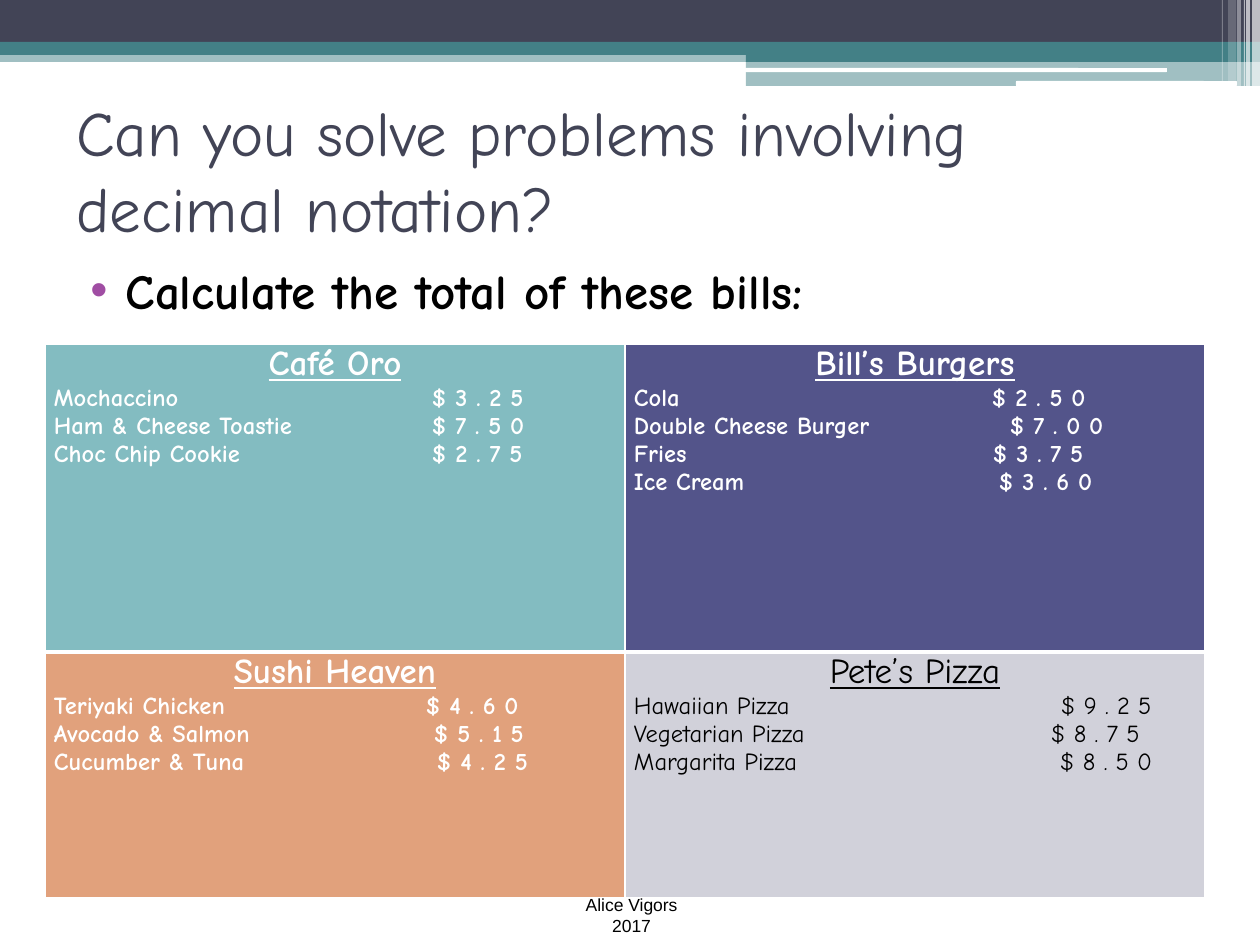
from lxml import etree
from pptx import Presentation, util as u
from pptx.dml.color import RGBColor
from pptx.enum import shapes, text
from pptx.oxml import ns

SCALE = 914400 / 126  # EMU per px

WHITE = RGBColor(0xFF, 0xFF, 0xFF)
BLACK = RGBColor(0, 0, 0)
NAVY = RGBColor(0x42, 0x44, 0x56)
TEAL = RGBColor(0x43, 0x80, 0x86)
AQUA = RGBColor(0x83, 0xBC, 0xC1)
INDIGO = RGBColor(0x53, 0x54, 0x8A)
PEACH = RGBColor(0xE1, 0xA1, 0x7C)
LILAC = RGBColor(0xD1, 0xD1, 0xDA)
BULLET = "A04DA3"

FONT = "Comic Neue"
TITLE = "Can you solve problems involving decimal notation?"
TASK = "Calculate the total of these bills:"
FOOTER = "Alice Vigors 2017"

# Each item: name, price, px from the cell's text edge to the price
BILLS = [
    [dict(name="Café Oro", fill=AQUA, color=WHITE, bold=True, items=[
        ("Mochaccino", "$ 3 . 2 5", 378),
        ("Ham & Cheese Toastie", "$ 7 . 5 0", 378),
        ("Choc Chip Cookie", "$ 2 . 7 5", 378)]),
     dict(name="Bill’s Burgers", fill=INDIGO, color=WHITE, bold=True, items=[
         ("Cola", "$ 2 . 5 0", 358),
         ("Double Cheese Burger", "$ 7 . 0 0", 376),
         ("Fries", "$ 3 . 7 5", 359),
         ("Ice Cream", "$ 3 . 6 0", 365)])],
    [dict(name="Sushi Heaven", fill=PEACH, color=WHITE, bold=True, items=[
        ("Teriyaki Chicken", "$ 4 . 6 0", 372),
        ("Avocado & Salmon", "$ 5 . 1 5", 380),
        ("Cucumber & Tuna", "$ 4 . 2 5", 383)]),
     dict(name="Pete’s Pizza", fill=LILAC, color=BLACK, bold=False, items=[
         ("Hawaiian Pizza", "$ 9 . 2 5", 427),
         ("Vegetarian Pizza", "$ 8 . 7 5", 417),
         ("Margarita Pizza", "$ 8 . 5 0", 426)])],
]
TABLE_LEFT, TABLE_TOP, COLUMN_WIDTH = 45, 344, 580
ROW_HEIGHTS = [308, 246]

# left, top, width, height, colour, opacity in percent
BANDS = [
    (0, 50, 1260, 12, TEAL, 50),
    (0, 0, 1260, 42, NAVY, 100),
    (0, 42, 1260, 13, TEAL, 100),
    (746, 49, 514, 13, TEAL, 100),
    (746, 61, 514, 25, TEAL, 50),
]
ROUNDED_LINES = [
    (745, 68, 422, 4, WHITE, 100),
    (1016, 81, 221, 5, WHITE, 100),
]
# left, width, height, opacity in percent
STRIPES = [(1252, 8, 86, 65), (1246, 4, 86, 65), (1244, 1, 86, 60),
           (1237, 4, 86, 40), (1228, 8, 81, 20), (1222, 1, 81, 30)]


def px(length):
    return u.Emu(round(length * SCALE))


def add_child(parent, tag, **attributes):
    return etree.SubElement(parent, ns.qn(tag), {k: str(v) for k, v in attributes.items()})


def add_block(slide, left, top, width, height, color, opacity,
              kind=shapes.MSO_SHAPE.RECTANGLE):
    shape = slide.shapes.add_shape(kind, px(left), px(top), px(width), px(height))
    shape.shadow.inherit = False
    shape.fill.solid()
    shape.fill.fore_color.rgb = color
    shape.line.fill.background()
    if opacity < 100:
        fill_color = shape.element.spPr.find(".//" + ns.qn("a:srgbClr"))
        add_child(fill_color, "a:alpha", val=opacity * 1000)


def write(paragraph, content, size, color, font=FONT, bold=False, underline=False,
          align=text.PP_ALIGN.LEFT):
    paragraph.alignment = align
    run = paragraph.add_run()
    run.text = content
    run.font.name = font
    run.font.size = u.Pt(size)
    run.font.color.rgb = color
    run.font.bold = bold
    run.font.underline = underline


def add_text(slide, left, top, width, height, content,
             anchor=text.MSO_ANCHOR.TOP, **style):
    box = slide.shapes.add_textbox(px(left), px(top), px(width), px(height))
    frame = box.text_frame
    frame.word_wrap = True
    frame.vertical_anchor = anchor
    write(frame.paragraphs[0], content, **style)
    return frame.paragraphs[0]


def add_bullet(paragraph):
    properties = paragraph._p.get_or_add_pPr()
    properties.set("marL", str(u.Inches(0.4)))
    properties.set("indent", str(u.Inches(-0.28)))
    paragraph.space_before = u.Pt(3)
    add_child(add_child(properties, "a:buClr"), "a:srgbClr", val=BULLET)
    add_child(properties, "a:buFont", typeface="Arial")
    add_child(properties, "a:buChar", char="•")


def add_tab_stop(paragraph, position):
    tabs = add_child(paragraph._p.get_or_add_pPr(), "a:tabLst")
    add_child(tabs, "a:tab", pos=px(position), algn="l")


def add_borders(cell, bottom):
    """Draw white borders, 1 pt except for the bottom one."""
    properties = cell._tc.get_or_add_tcPr()
    for side, width in (("L", 1), ("R", 1), ("T", 1), ("B", bottom)):
        line = add_child(properties, "a:ln" + side, w=u.Pt(width))
        add_child(add_child(line, "a:solidFill"), "a:srgbClr", val=WHITE)


def fill_bill(cell, bill, bottom_border):
    add_borders(cell, bottom_border)
    cell.fill.solid()
    cell.fill.fore_color.rgb = bill["fill"]
    cell.margin_left = cell.margin_right = px(9)
    cell.margin_top = cell.margin_bottom = 0
    style = dict(color=bill["color"], bold=bill["bold"])
    frame = cell.text_frame
    write(frame.paragraphs[0], bill["name"], size=20, underline=True,
          align=text.PP_ALIGN.CENTER, **style)
    for name, price, position in bill["items"]:
        paragraph = frame.add_paragraph()
        write(paragraph, f"{name}\t{price}", size=14, **style)
        add_tab_stop(paragraph, position)


def add_bills(slide):
    frame = slide.shapes.add_table(2, 2, px(TABLE_LEFT), px(TABLE_TOP),
                                   px(2 * COLUMN_WIDTH), px(sum(ROW_HEIGHTS)))
    table = frame.table
    table.first_row = table.horz_banding = False
    for column in table.columns:
        column.width = px(COLUMN_WIDTH)
    for r, (height, bills) in enumerate(zip(ROW_HEIGHTS, BILLS)):
        table.rows[r].height = px(height)
        for c, bill in enumerate(bills):
            fill_bill(table.cell(r, c), bill, bottom_border=3 if r == 0 else 1)


def main():
    presentation = Presentation()
    presentation.slide_width, presentation.slide_height = px(1260), px(945)
    slide = presentation.slides.add_slide(presentation.slide_layouts[6])

    for band in BANDS:
        add_block(slide, *band)
    for line in ROUNDED_LINES:
        add_block(slide, *line, kind=shapes.MSO_SHAPE.ROUNDED_RECTANGLE)
    for left, width, height, opacity in STRIPES:
        add_block(slide, left, 0, width, height, WHITE, opacity)

    add_text(slide, 64, 96, 1134, 147, TITLE, size=36, color=NAVY,
             anchor=text.MSO_ANCHOR.MIDDLE)
    add_bullet(add_text(slide, 63, 254, 1134, 651, TASK, size=28, color=BLACK, bold=True))
    add_bills(slide)
    add_text(slide, 564, 888, 135, 55, FOOTER, size=10, color=BLACK, font="Arial",
             align=text.PP_ALIGN.CENTER)
    presentation.save("out.pptx")


if __name__ == "__main__":
    main()
